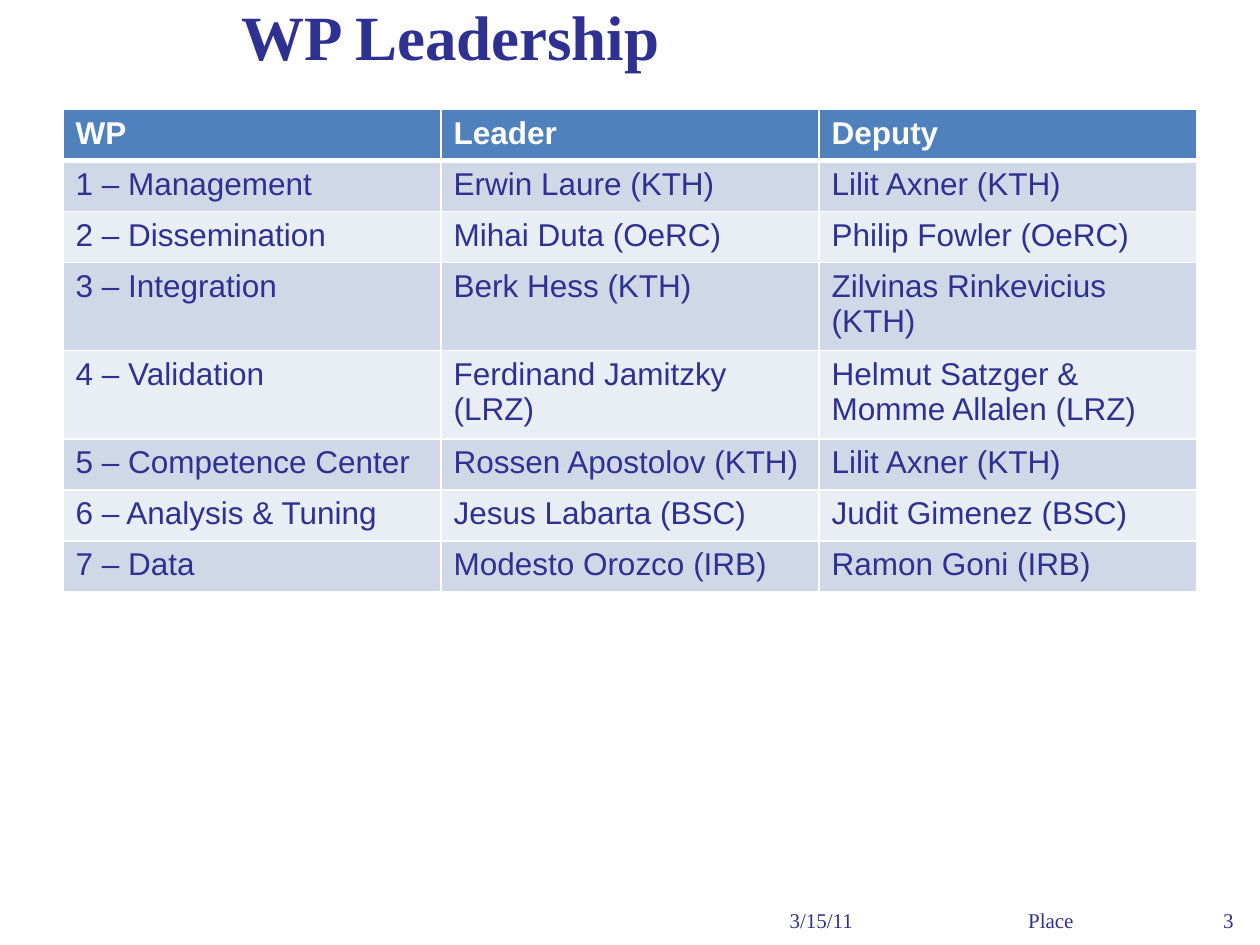
import pptx
import pptx.dml.color
import pptx.enum.text
import pptx.oxml.ns
import pptx.util
from lxml import etree

Cm = pptx.util.Cm
Pt = pptx.util.Pt
ALIGN = pptx.enum.text.PP_ALIGN
MIDDLE = pptx.enum.text.MSO_ANCHOR.MIDDLE

NAVY, WHITE, HEADER_BLUE = "2E3192", "FFFFFF", "4F81BD"
BANDS = ("D0D8E8", "E9EDF4")

SERIF = {"name": "Times New Roman", "size": Pt(12), "bold": False}
TITLE = {**SERIF, "size": Pt(36), "bold": True}
BODY = {"name": "Arial", "size": Pt(18), "bold": False}
HEADER = {**BODY, "bold": True}

ROWS = [
    ("WP", "Leader", "Deputy"),
    ("1 – Management", "Erwin Laure (KTH)", "Lilit Axner (KTH)"),
    ("2 – Dissemination", "Mihai Duta (OeRC)", "Philip Fowler (OeRC)"),
    ("3 – Integration", "Berk Hess (KTH)", "Zilvinas Rinkevicius (KTH)"),
    ("4 – Validation", "Ferdinand Jamitzky (LRZ)", "Helmut Satzger & Momme Allalen (LRZ)"),
    ("5 – Competence Center", "Rossen Apostolov (KTH)", "Lilit Axner (KTH)"),
    ("6 – Analysis & Tuning", "Jesus Labarta (BSC)", "Judit Gimenez (BSC)"),
    ("7 – Data", "Modesto Orozco (IRB)", "Ramon Goni (IRB)"),
]


def rgb(color):
    return pptx.dml.color.RGBColor.from_string(color)


def write(para, text, style, color):
    span = para.add_run()
    span.text = text
    for attribute, value in style.items():
        setattr(span.font, attribute, value)
    span.font.color.rgb = rgb(color)


def add_text(page, box, text, style, align):
    frame = page.shapes.add_textbox(*map(Cm, box)).text_frame
    frame.word_wrap = True
    frame.vertical_anchor = MIDDLE
    frame.margin_top = frame.margin_bottom = 0
    frame.paragraphs[0].alignment = align
    write(frame.paragraphs[0], text, style, NAVY)


def set_borders(cell, widths, color):
    """Draw the cell's edges; widths maps L, R, T, B to points."""
    properties = cell._tc.get_or_add_tcPr()
    qn = pptx.oxml.ns.qn
    for side in "LRTB":
        line = etree.SubElement(properties, qn(f"a:ln{side}"), w=str(Pt(widths[side])))
        fill = etree.SubElement(line, qn("a:solidFill"))
        etree.SubElement(fill, qn("a:srgbClr"), val=color)


def add_leadership_table(page, box):
    left, top, width, row_height = box
    columns = len(ROWS[0])
    table = page.shapes.add_table(
        len(ROWS), columns, Cm(left), Cm(top), Cm(width), Cm(row_height * len(ROWS))
    ).table
    for column in table.columns:
        column.width = Cm(width / columns)
    for row_index, texts in enumerate(ROWS):
        is_header = row_index == 0
        table.rows[row_index].height = Cm(row_height)
        fill = HEADER_BLUE if is_header else BANDS[(row_index - 1) % 2]
        widths = {"L": 1, "R": 1, "T": 3 if row_index == 1 else 1, "B": 3 if is_header else 1}
        for column_index, text in enumerate(texts):
            cell = table.cell(row_index, column_index)
            set_borders(cell, widths, WHITE)
            cell.fill.solid()
            cell.fill.fore_color.rgb = rgb(fill)
            write(cell.text_frame.paragraphs[0], text,
                  HEADER if is_header else BODY, WHITE if is_header else NAVY)


def add_footer(page, box):
    left, top, height = box
    parts = [
        (0, 2.95, "3/15/11", ALIGN.LEFT),
        (3.18, 4.67, "Place", ALIGN.CENTER),
        (7.95, 1.5, "3", ALIGN.RIGHT),
    ]
    for offset, width, text, align in parts:
        add_text(page, (left + offset, top, width, height), text, SERIF, align)


def main():
    deck = pptx.Presentation()
    deck.slide_width, deck.slide_height = Cm(25.4), Cm(19.05)
    page = deck.slides.add_slide(deck.slide_layouts[6])
    add_text(page, (0.79, 0, 16.59, 1.42), "WP Leadership", TITLE, ALIGN.CENTER)
    add_leadership_table(page, (1.27, 2.2, 22.86, 1.03))
    add_footer(page, (15.67, 18.26, 0.58))
    deck.save("out.pptx")


if __name__ == "__main__":
    main()
